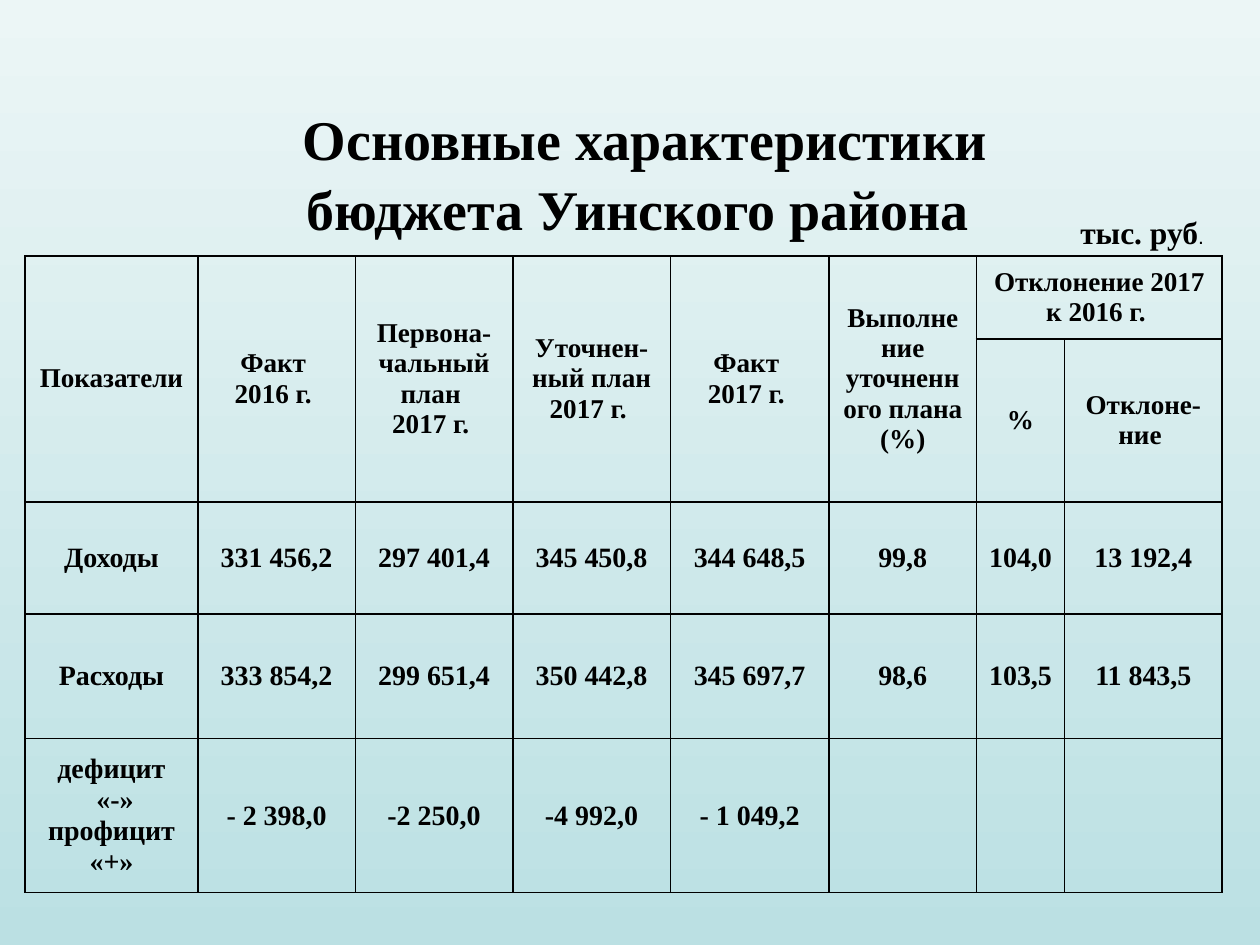
from lxml.etree import SubElement
from pptx import Presentation
from pptx.dml.color import RGBColor
from pptx.enum.text import MSO_ANCHOR, PP_ALIGN
from pptx.oxml.ns import qn
from pptx.util import Inches, Pt

COLORS = {"sky": "ECF6F6", "aqua": "BBE0E3", "ink": "000000"}
SERIF = "Times New Roman"

HEADING = "Основные характеристики бюджета Уинского района "
UNIT = "тыс. руб"
HEADERS = [
    "Показатели",
    "Факт \n2016 г. ",
    "Первона-чальный план \n2017 г. ",
    "Уточнен-ный план 2017 г. ",
    "Факт \n2017 г. ",
    "Выполнение уточненного плана (%)",
    "Отклонение 2017 к 2016 г. ",
]
DEVIATION_HEADERS = ["%", "Отклоне-ние "]
BUDGET = [
    ["Доходы", "331 456,2", "297 401,4", "345 450,8", "344 648,5", "99,8", "104,0", "13 192,4"],
    ["Расходы", "333 854,2", "299 651,4", "350 442,8", "345 697,7", "98,6", "103,5", "11 843,5"],
    ["дефицит\n «-»\nпрофицит «+»", "- 2 398,0", "-2 250,0", "-4 992,0", "- 1 049,2", "", "", ""],
]
COLUMN_WIDTHS = [1.37, 1.25, 1.25, 1.25, 1.26, 1.17, 0.7, 1.25]
ROW_HEIGHTS = [0.66, 1.13, 0.89, 0.99, 1.22]
DEVIATION_COLUMN = 6


def write(frame, text, size=16, font=SERIF, bold=True, append=False,
          anchor=MSO_ANCHOR.TOP, before=0, spacing=None):
    frame.word_wrap = True
    frame.vertical_anchor = anchor
    for index, line in enumerate(text.split("\n")):
        if append or index == 0:
            paragraph = frame.paragraphs[-1]
        else:
            paragraph = frame.add_paragraph()
        paragraph.alignment = PP_ALIGN.CENTER
        paragraph.space_before = Pt(before)
        if spacing:
            paragraph.line_spacing = spacing
        run = paragraph.add_run()
        run.text = line
        run.font.size = Pt(size)
        run.font.name = font
        run.font.bold = bold
        run.font.color.rgb = RGBColor.from_string(COLORS["ink"])


def add_borders(cell):
    properties = cell._tc.get_or_add_tcPr()
    for index, side in enumerate(("lnL", "lnR", "lnT", "lnB")):
        border = properties.makeelement(qn(f"a:{side}"), {"w": str(Pt(1))})
        properties.insert(index, border)
        fill = SubElement(border, qn("a:solidFill"))
        SubElement(fill, qn("a:srgbClr"), val=COLORS["ink"])


def paint_background(slide):
    fill = slide.background.fill
    fill.gradient()
    fill.gradient_angle = 270
    for stop, name in zip(fill.gradient_stops, ("sky", "aqua")):
        stop.color.rgb = RGBColor.from_string(COLORS[name])


def add_budget(slide):
    budget = slide.shapes.add_table(
        len(ROW_HEIGHTS), len(COLUMN_WIDTHS), Inches(0.2), Inches(2.03),
        Inches(sum(COLUMN_WIDTHS)), Inches(sum(ROW_HEIGHTS))).table
    budget.first_row = False
    budget.horz_banding = False
    for column, width in zip(budget.columns, COLUMN_WIDTHS):
        column.width = Inches(width)
    for row, height in zip(budget.rows, ROW_HEIGHTS):
        row.height = Inches(height)

    for column in range(DEVIATION_COLUMN):
        budget.cell(0, column).merge(budget.cell(1, column))
    budget.cell(0, DEVIATION_COLUMN).merge(budget.cell(0, DEVIATION_COLUMN + 1))

    rows = [HEADERS + [""], [""] * DEVIATION_COLUMN + DEVIATION_HEADERS] + BUDGET
    for row, labels in enumerate(rows):
        is_header = row < 2
        for column, label in enumerate(labels):
            cell = budget.cell(row, column)
            cell.fill.background()
            add_borders(cell)
            cell.vertical_anchor = MSO_ANCHOR.MIDDLE
            if not is_header:
                cell.margin_left = cell.margin_right = Inches(0.08)
            if label:
                write(cell.text_frame, label, size=15.5 if is_header else 16,
                      anchor=None)


def main():
    deck = Presentation()
    deck.slide_width, deck.slide_height = Inches(10), Inches(7.5)
    slide = deck.slides.add_slide(deck.slide_layouts[5])
    paint_background(slide)

    heading = slide.shapes.title
    heading.left, heading.top = Inches(1.46), Inches(0.76)
    heading.width, heading.height = Inches(7.32), Inches(1.18)
    write(heading.text_frame, HEADING, size=32, before=2, spacing=1.04)

    add_budget(slide)

    unit = slide.shapes.add_textbox(Inches(8.36), Inches(1.64), Inches(1.41), Inches(0.4))
    write(unit.text_frame, UNIT, size=18, before=2)
    write(unit.text_frame, ".", size=12, font="Arial", bold=False, append=True, before=2)

    deck.save("out.pptx")


if __name__ == "__main__":
    main()
